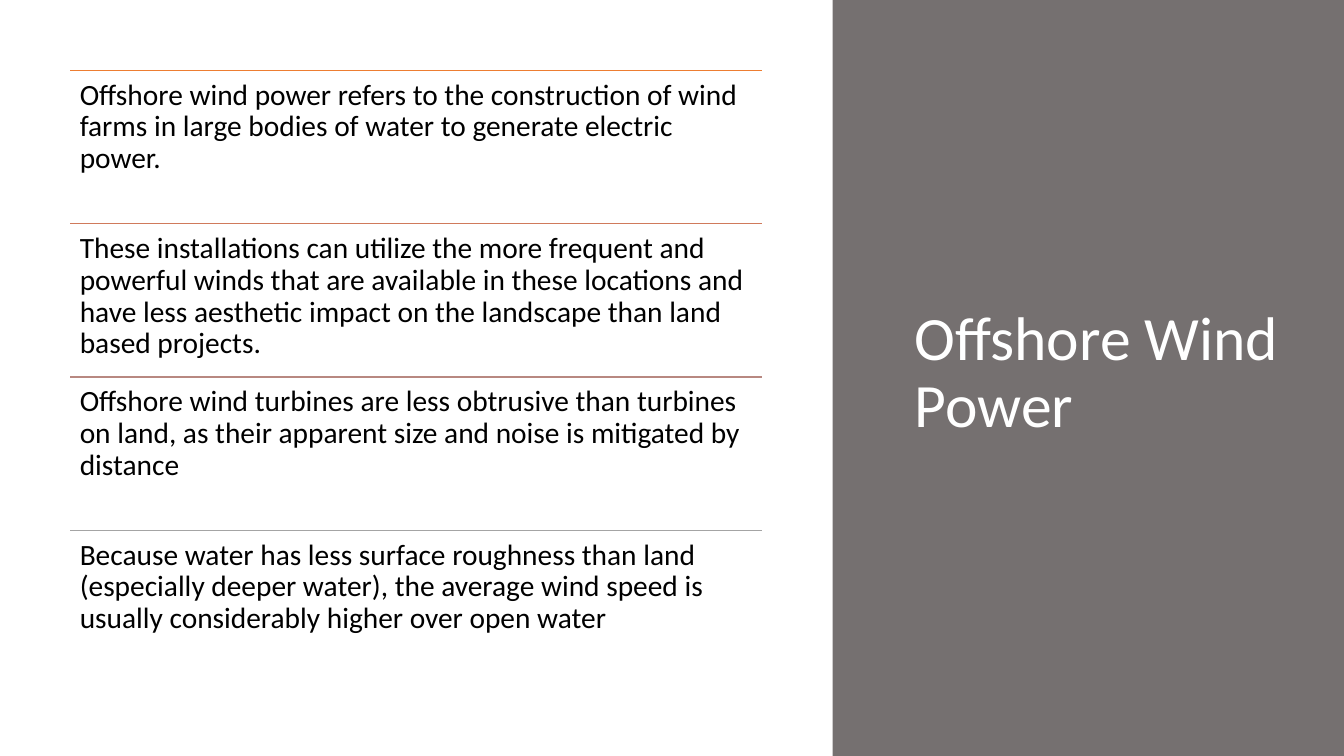
from dataclasses import dataclass

from lxml.etree import SubElement
from pptx import Presentation
from pptx.dml.color import RGBColor
from pptx.enum.shapes import MSO_CONNECTOR, MSO_SHAPE
from pptx.enum.text import MSO_ANCHOR, MSO_AUTO_SIZE, PP_ALIGN
from pptx.oxml.ns import qn
from pptx.util import Pt


@dataclass(frozen=True)
class Theme:
    """Colours, font and type sizes of the slide."""
    font: str = "Calibri"
    title_size: int = 44
    body_size: int = 21
    rule_weight: int = 1
    panel: str = "757070"
    title: str = "FFFFFF"
    body: str = "000000"
    rules: tuple = ("ED7D31", "D07A5B", "B88881", "A4A4A4")


def px(length):
    """Turn pixels at 96 to the inch into EMU."""
    return length * 9525


class SlideBuilder:
    """Holds the theme and the current slide, and draws its elements."""

    def __init__(self, page, theme):
        self.page = page
        self.theme = theme

    def place(self, shape, left, top, width, height):
        """Move and size a shape in pixels."""
        bounds = {"left": left, "top": top, "width": width, "height": height}
        for name, value in bounds.items():
            setattr(shape, name, px(value))

    def fill_text(self, box, text, size, color, anchor, inset_x, inset_y):
        """Fill a shape with one formatted paragraph."""
        frame = box.text_frame
        frame_format = {
            "word_wrap": True, "auto_size": MSO_AUTO_SIZE.NONE,
            "vertical_anchor": anchor,
            "margin_left": px(inset_x), "margin_right": px(inset_x),
            "margin_top": px(inset_y), "margin_bottom": px(inset_y),
        }
        for name, value in frame_format.items():
            setattr(frame, name, value)
        para = frame.paragraphs[0]
        para.alignment = PP_ALIGN.LEFT
        para.line_spacing = 0.9
        span = para.add_run()
        span.text = text
        for name, value in {"name": self.theme.font, "size": Pt(size)}.items():
            setattr(span.font, name, value)
        span.font.color.rgb = RGBColor.from_string(color)

    def panel(self, left, top, width, height):
        """Draw the plain panel behind the title."""
        panel = self.page.shapes.add_shape(
            MSO_SHAPE.RECTANGLE, *map(px, (left, top, width, height)))
        panel.shadow.inherit = False
        panel.fill.solid()
        panel.fill.fore_color.rgb = RGBColor.from_string(self.theme.panel)
        panel.line.fill.background()
        self.page.shapes.title.element.addprevious(panel.element)

    def title(self, text, left, top, width, height):
        """Move and fill the title placeholder."""
        title = self.page.shapes.title
        self.place(title, left, top, width, height)
        self.fill_text(title, text, self.theme.title_size, self.theme.title,
                       MSO_ANCHOR.MIDDLE, 10, 5)

    def rule(self, left, top, width, color):
        """Draw a thin horizontal rule."""
        rule = self.page.shapes.add_connector(
            MSO_CONNECTOR.STRAIGHT, *map(px, (left, top, left + width, top)))
        rule.line.color.rgb = RGBColor.from_string(color)
        rule.line.width = Pt(self.theme.rule_weight)
        SubElement(rule.element.spPr, qn("a:effectLst"))

    def statement(self, text, left, top, width, height):
        """Add one block of body text."""
        box = self.page.shapes.add_textbox(
            *map(px, (left, top, width, height)))
        self.fill_text(box, text, self.theme.body_size, self.theme.body,
                       MSO_ANCHOR.TOP, 9, 9)


STATEMENTS = (
    "Offshore wind power refers to the construction of wind farms in large "
    "bodies of water to generate electric power.",
    "These installations can utilize the more frequent and powerful winds "
    "that are available in these locations and have less aesthetic impact on "
    "the landscape than land based projects.",
    "Offshore wind turbines are less obtrusive than turbines on land, as "
    "their apparent size and noise is mitigated by distance",
    "Because water has less surface roughness than land (especially deeper "
    "water), the average wind speed is usually considerably higher over open "
    "water",
)


def main():
    """Build and save the slide."""
    deck = Presentation()
    deck.slide_width, deck.slide_height = px(1280), px(720)
    theme = Theme()
    builder = SlideBuilder(deck.slides.add_slide(deck.slide_layouts[5]), theme)
    builder.panel(793, 0, 487, 720)
    builder.title("Offshore Wind Power", 861, 67, 385, 578)
    left, first_top, width, row_height = 67, 67, 659, 146
    for row, (text, color) in enumerate(zip(STATEMENTS, theme.rules)):
        top = first_top + row * row_height
        builder.rule(left, top, width, color)
        builder.statement(text, left, top, width, row_height)
    deck.save("out.pptx")


if __name__ == "__main__":
    main()
